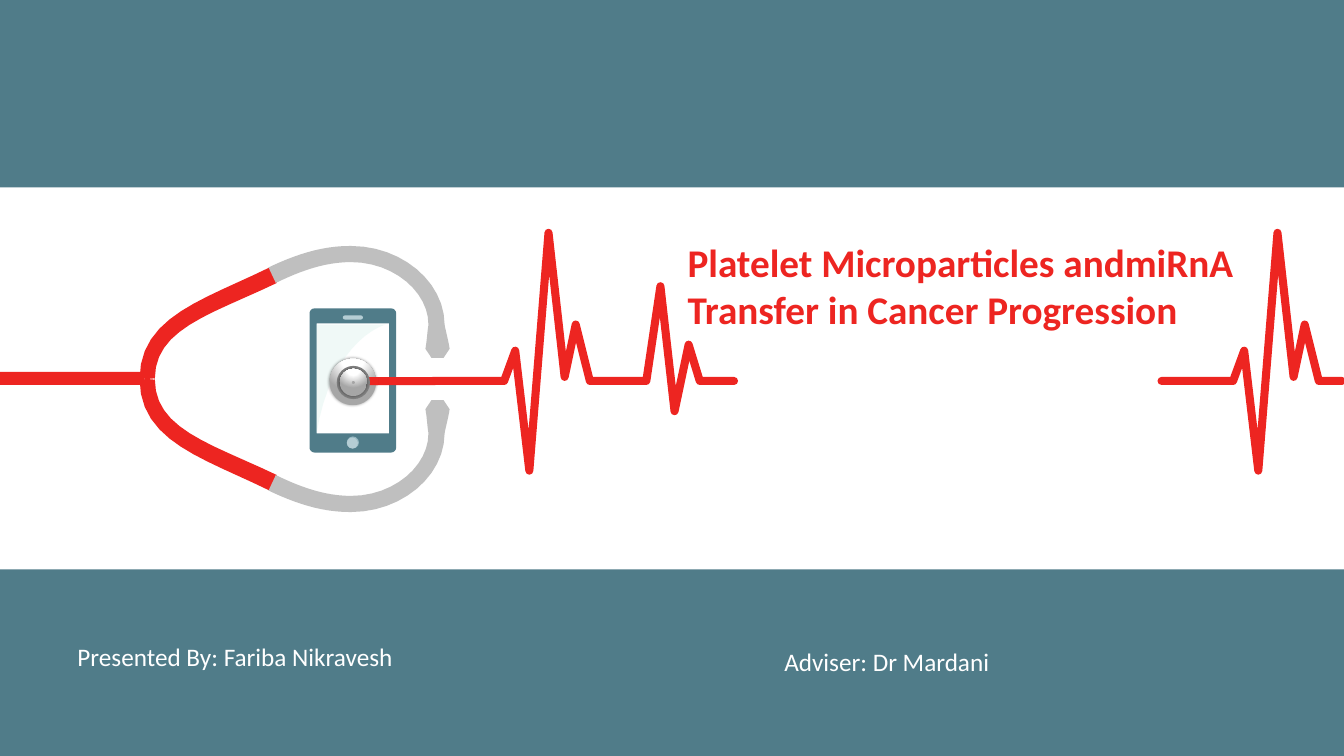
from dataclasses import dataclass
from math import cos, hypot, pi, sin

from lxml import etree
from pptx import Presentation
from pptx.dml.color import RGBColor
from pptx.enum.shapes import MSO_SHAPE
from pptx.enum.text import MSO_ANCHOR, MSO_AUTO_SIZE, PP_ALIGN
from pptx.oxml import parse_xml
from pptx.oxml.ns import nsdecls, qn
from pptx.util import Pt

RECTANGLE, PILL, OVAL = MSO_SHAPE.RECTANGLE, MSO_SHAPE.ROUNDED_RECTANGLE, MSO_SHAPE.OVAL
MIDDLE, TOP = MSO_ANCHOR.MIDDLE, MSO_ANCHOR.TOP
LEFT, NO_AUTOFIT = PP_ALIGN.LEFT, MSO_AUTO_SIZE.NONE
PX = 9144  # 100 px to the inch
TITLE_ONLY = 5
CURVE_STEPS = 12

Point = tuple[float, float]
Contour = list[Point]


@dataclass(frozen=True)
class Theme:
    font: str = "Calibri"
    title_size: int = 28
    credit_size: int = 18
    teal: str = "507C89"
    pale_teal: str = "B5CDD4"
    button_rim: str = "90B4BE"
    glare: str = "BCE7DC"
    red: str = "ED2521"
    tube_grey: str = "BFBFBF"
    ring_grey: str = "808080"
    steel: str = "A6A6A6"
    white: str = "FFFFFF"
    shadow: str = "000000"


THEME = Theme()


@dataclass(frozen=True)
class Preset:
    kind: MSO_SHAPE
    left: int
    top: int
    width: int
    height: int
    colour: str
    metallic: bool = False


@dataclass(frozen=True)
class Outline:
    contours: list[Contour]
    colour: str
    opacity: int = 100


@dataclass(frozen=True)
class Wave:
    """One straight run of the heartbeat: step to the right, end above the baseline."""
    step: int
    rise: int


@dataclass(frozen=True)
class Trace:
    start: int
    waves: list[Wave]
    end: int


@dataclass(frozen=True)
class Curve:
    """A cubic curve whose tube may widen from one end to the other."""
    start: Point
    first_control: Point
    second_control: Point
    end: Point
    start_width: int
    end_width: int

    def at(self, t: float) -> Point:
        weights = ((1 - t) ** 3, 3 * t * (1 - t) ** 2, 3 * t ** 2 * (1 - t), t ** 3)
        points = (self.start, self.first_control, self.second_control, self.end)
        return (sum(w * x for w, (x, _) in zip(weights, points)),
                sum(w * y for w, (_, y) in zip(weights, points)))

    def samples(self) -> list[tuple[Point, float]]:
        growth = self.end_width - self.start_width
        steps = [step / CURVE_STEPS for step in range(CURVE_STEPS + 1)]
        return [(self.at(t), self.start_width + growth * t) for t in steps]


@dataclass(frozen=True)
class Caption:
    text: str
    left: int
    top: int
    width: int
    height: int


# Geometry rules
def rounded_box(left: int, top: int, width: int, height: int, radius: int) -> Contour:
    centres = [(left + width - radius, top + height - radius), (left + radius, top + height - radius),
               (left + radius, top + radius), (left + width - radius, top + radius)]
    return [(x + radius * cos(angle), y + radius * sin(angle))
            for quarter, (x, y) in enumerate(centres)
            for angle in (pi / 2 * (quarter + part / 4) for part in range(5))]


def tube(curves: list[Curve]) -> Contour:
    """Outline joined curves by stepping half a width to each side."""
    samples = curves[0].samples()
    for curve in curves[1:]:
        samples += curve.samples()[1:]
    near, far = [], []
    for index, ((x, y), width) in enumerate(samples):
        (x0, y0), _ = samples[max(index - 1, 0)]
        (x1, y1), _ = samples[min(index + 1, len(samples) - 1)]
        half = width / 2 / hypot(x1 - x0, y1 - y0)
        near.append((x + (y1 - y0) * half, y - (x1 - x0) * half))
        far.append((x - (y1 - y0) * half, y + (x1 - x0) * half))
    return near + far[::-1]


def mirrored(contour: Contour) -> Contour:
    return [(x, 2 * AXIS - y) for x, y in contour]


def trace_points(trace: Trace) -> Contour:
    x = trace.start + LEAD_IN
    points = [(trace.start, BASELINE), (x, BASELINE)]
    for wave in trace.waves:
        x += wave.step
        points.append((x, BASELINE - wave.rise))
    return points + [(trace.end, BASELINE)]


# Heartbeat: both traces open with the same full beat
BASELINE, LEAD_IN, TRACE_WIDTH, TRACE_SHIFT = 378, 71, 8, 723
FULL_BEAT = [Wave(11, 30), Wave(14, -89), Wave(19, 147), Wave(16, 4), Wave(11, 56), Wave(14, 0)]
PAUSE = Wave(56, 0)
SHORT_BEAT = [Wave(14, 94), Wave(14, -30), Wave(14, 36), Wave(11, 0)]
LEFT_TRACE = Trace(429, [*FULL_BEAT, PAUSE, *SHORT_BEAT], 728)
RIGHT_TRACE = Trace(429 + TRACE_SHIFT, FULL_BEAT, 1331)

# Stethoscope: the upper half is drawn, the lower half mirrors it
AXIS = 376
FORK_ARM = tube([Curve((146, AXIS), (146, 320), (205, 305), (271, 273), 15, 17)])
EARPIECE = tube([
    Curve((270, 273), (295, 261), (320, 252), (348, 252), 17, 16),
    Curve((348, 252), (395, 252), (433, 285), (433, 322), 16, 16),
    Curve((433, 322), (433, 330), (434, 338), (434, 346), 16, 24),
    Curve((434, 346), (434, 349), (434, 352), (434, 355), 24, 12)])

# Phone: a frame around an open screen, with a curved glare
PHONE_FRAME = [rounded_box(307, 306, 86, 143, 5), rounded_box(314, 321, 72, 109, 0)]
GLARE_EDGE = Curve((314, 430), (324, 365), (356, 331), (382, 322), 0, 0)
GLARE = [(314, 322), *(point for point, _ in GLARE_EDGE.samples())]


def disc(diameter: int, colour: str, metallic: bool = False) -> Preset:
    """One of the concentric discs of the chest piece."""
    left, top = 350 - diameter // 2, 379 - diameter // 2
    return Preset(OVAL, left, top, diameter, diameter, colour, metallic)


# Everything drawn, from back to front
ARTWORK: list[Preset | Outline | Trace] = [
    *(Preset(RECTANGLE, 0, top, 1333, 186, THEME.teal) for top in (0, 565)),
    Outline(PHONE_FRAME, THEME.teal),
    Preset(PILL, 340, 313, 20, 4, THEME.pale_teal),
    Preset(OVAL, 344, 433, 12, 12, THEME.button_rim),
    Outline([GLARE], THEME.glare, opacity=22),
    Preset(OVAL, 344, 434, 11, 11, THEME.pale_teal),
    Preset(RECTANGLE, 372, 374, 60, TRACE_WIDTH, THEME.red),
    Outline([FORK_ARM[:], mirrored(FORK_ARM)], THEME.red),
    Outline([EARPIECE, mirrored(EARPIECE)], THEME.tube_grey),
    Preset(RECTANGLE, -1, 369, 144, 13, THEME.red),
    LEFT_TRACE,
    RIGHT_TRACE,
    disc(46, THEME.white, metallic=True),
    Preset(RECTANGLE, 366, 374, 9, TRACE_WIDTH, THEME.red),
    disc(33, THEME.ring_grey),
    disc(27, THEME.white, metallic=True),
    disc(3, THEME.steel),
]
TITLE = Caption("Platelet Microparticles andmiRnA\nTransfer in Cancer Progression", 672, 231, 566, 104)
CREDITS = [
    Caption("Presented By: Fariba Nikravesh", 67, 631, 518, 40),
    Caption("Adviser: Dr Mardani", 768, 636, 482, 40),
]


# Drawing
def paint(shape, colour: str) -> None:
    shape.shadow.inherit = False
    shape.line.fill.background()
    shape.fill.solid()
    shape.fill.fore_color.rgb = RGBColor.from_string(colour)


def make_metallic(shape) -> None:
    """Give a disc a white-to-steel radial gradient and a soft halo."""
    properties = shape._element.spPr
    stops = "".join(
        f'<a:gs pos="{position}"><a:srgbClr val="{colour}"/></a:gs>'
        for position, colour in ((0, THEME.white), (35000, THEME.white), (100000, THEME.steel)))
    gradient = parse_xml(
        f'<a:gradFill {nsdecls("a")} rotWithShape="1"><a:gsLst>{stops}</a:gsLst><a:path path="circle">'
        '<a:fillToRect l="50000" t="-80000" r="50000" b="180000"/></a:path></a:gradFill>')
    properties.replace(properties.find(qn("a:solidFill")), gradient)
    properties.find(qn("a:effectLst")).append(parse_xml(
        f'<a:outerShdw {nsdecls("a")} blurRad="25400" dist="0" dir="0"><a:srgbClr val="{THEME.shadow}">'
        '<a:alpha val="40000"/></a:srgbClr></a:outerShdw>'))


def draw_preset(slide, item: Preset) -> None:
    shape = slide.shapes.add_shape(
        item.kind, item.left * PX, item.top * PX, item.width * PX, item.height * PX)
    if item.kind == PILL:
        shape.adjustments[0] = 0.5
    paint(shape, item.colour)
    if item.metallic:
        make_metallic(shape)


def add_freeform(slide, contours: list[Contour], close: bool):
    first, *others = [[(x * PX, y * PX) for x, y in contour] for contour in contours]
    builder = slide.shapes.build_freeform(*first[0])
    builder.add_line_segments(first[1:], close=close)
    for contour in others:
        builder.move_to(*contour[0])
        builder.add_line_segments(contour[1:], close=close)
    return builder.convert_to_shape()


def draw_outline(slide, item: Outline) -> None:
    shape = add_freeform(slide, item.contours, close=True)
    paint(shape, item.colour)
    if item.opacity < 100:
        colour = shape._element.spPr.find(qn("a:solidFill"))[0]
        etree.SubElement(colour, qn("a:alpha")).set("val", str(item.opacity * 1000))


def draw_trace(slide, item: Trace) -> None:
    shape = add_freeform(slide, [trace_points(item)], close=False)
    shape.shadow.inherit = False
    shape.fill.background()
    shape.line.color.rgb = RGBColor.from_string(THEME.red)
    shape.line.width = TRACE_WIDTH * PX
    line = shape._element.spPr.find(qn("a:ln"))
    line.set("cap", "rnd")
    etree.SubElement(line, qn("a:round"))


def write(shape, item: Caption, size: int, colour: str, bold: bool, anchor: MSO_ANCHOR) -> None:
    shape.left, shape.top = item.left * PX, item.top * PX
    shape.width, shape.height = item.width * PX, item.height * PX
    frame = shape.text_frame
    frame.text = item.text
    frame.word_wrap, frame.auto_size, frame.vertical_anchor = True, NO_AUTOFIT, anchor
    for paragraph in frame.paragraphs:
        paragraph.alignment = LEFT
        paragraph.font.name, paragraph.font.size = THEME.font, Pt(size)
        paragraph.font.bold = bold
        paragraph.font.color.rgb = RGBColor.from_string(colour)


DRAWERS = {Preset: draw_preset, Outline: draw_outline, Trace: draw_trace}


def main() -> None:
    presentation = Presentation()
    presentation.slide_width, presentation.slide_height = 1333 * PX, 750 * PX
    slide = presentation.slides.add_slide(presentation.slide_layouts[TITLE_ONLY])
    for item in ARTWORK:
        DRAWERS[type(item)](slide, item)
    write(slide.shapes.title, TITLE, THEME.title_size, THEME.red, True, MIDDLE)
    for credit in CREDITS:
        write(slide.shapes.add_textbox(0, 0, PX, PX), credit, THEME.credit_size, THEME.white, False, TOP)
    presentation.save("out.pptx")


if __name__ == "__main__":
    main()
